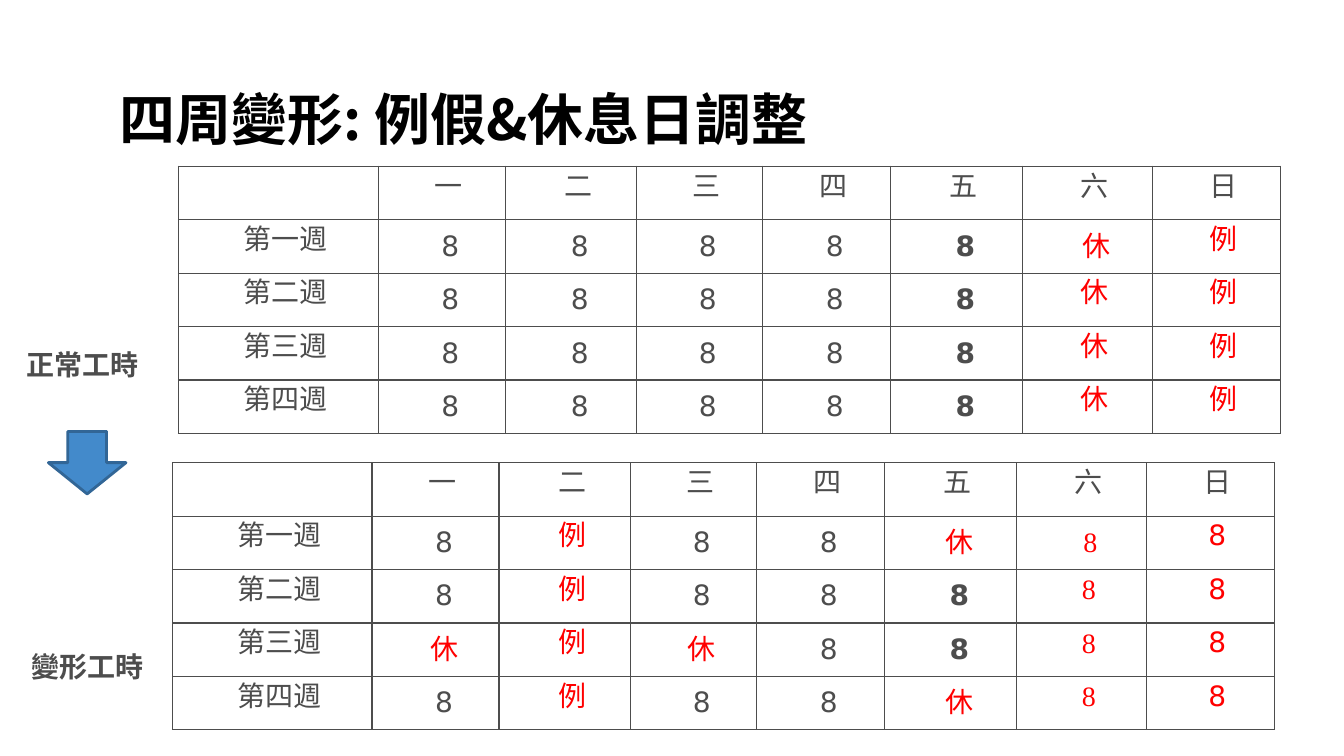
"""Build a slide comparing normal and four-week flexible working schedules."""
from lxml import etree
from pptx import Presentation
from pptx.dml.color import RGBColor
from pptx.enum import shapes, text
from pptx.oxml import ns
from pptx.util import Inches, Pt

TITLE = "四周變形: 例假&休息日調整"
DAYS = "一二三四五六日"
WEEKS = ["第一週", "第二週", "第三週", "第四週"]
NORMAL = ["88888休例"] * 4
FLEX = ["8例88休88", "8例88888", "休例休8888", "8例88休88"]
TABLES = [(1.77, 1.65, NORMAL), (1.71, 4.59, FLEX)]
LABELS = [("正常工時", 0.16, 3.4), ("變形工時", 0.21, 6.39)]
WIDTHS = [1.98, 1.26, 1.3, 1.25, 1.27, 1.31, 1.29, 1.27]
ROW = 0.53
GRAY, RED, WHITE = "4D4D4D", "FF0000", "FFFFFF"
SANS, CJK, SERIF = "DejaVu Sans", "Noto Sans CJK SC", "Times New Roman"
FRI, SAT, SUN = 5, 6, 7


def color(code):
    return RGBColor.from_string(code)


def write(frame, words, size=20, font=SANS, ink=GRAY, bold=False,
          align=text.PP_ALIGN.LEFT, line=None, left=0, first=0):
    para = frame.paragraphs[0]
    para.alignment = align
    if line:
        para.line_spacing = Pt(line)
    props = para._p.get_or_add_pPr()
    props.set("marL", str(Inches(left)))
    props.set("indent", str(Inches(first)))
    run = para.add_run()
    run.text = words
    run.font.size, run.font.bold, run.font.name = Pt(size), bold, font
    run.font.color.rgb = color(ink)
    east = etree.SubElement(run._r.get_or_add_rPr(), ns.qn("a:ea"))
    east.set("typeface", font)


def border(cell):
    props = cell._tc.get_or_add_tcPr()
    for side in "LRTB":
        line = etree.SubElement(props, ns.qn(f"a:ln{side}"), w=str(Pt(1)))
        fill = etree.SubElement(line, ns.qn("a:solidFill"))
        etree.SubElement(fill, ns.qn("a:srgbClr"), val=GRAY)


def fill_cell(cell, words, row, col, flex):
    border(cell)
    if row and col == FRI:
        cell.fill.solid()
        cell.fill.fore_color.rgb = color(WHITE)
    else:
        cell.fill.background()
    if not words:
        return
    cell.margin_left = cell.margin_right = 0
    cell.margin_top = cell.margin_bottom = 0
    cell.vertical_anchor = text.MSO_ANCHOR.MIDDLE
    work = words == "8"
    tight = (row == 0 or col in (0, SUN) or words == "例"
             or (col == SAT and row > 1))
    red = row and (words in "休例" or (flex and col >= SAT))
    write(cell.text_frame, words,
          font=SERIF if work and col == SAT else SANS,
          ink=RED if red else GRAY, bold=work and col == FRI,
          align=text.PP_ALIGN.CENTER, line=13.7 if tight else None,
          left=(0.14 if tight else 0.17) + (0.01 if col in (0, 2, 5, 6) else 0))


def add_grid(slide, left, top, plan):
    rows = [["", *DAYS]] + [[week, *days] for week, days in zip(WEEKS, plan)]
    table = slide.shapes.add_table(
        len(rows), len(WIDTHS), Inches(left), Inches(top),
        Inches(sum(WIDTHS)), Inches(ROW * len(rows))).table
    table.first_row = table.horz_banding = False
    for col, width in zip(table.columns, WIDTHS):
        col.width = Inches(width)
    for r, row in enumerate(rows):
        table.rows[r].height = Inches(ROW)
        for c, words in enumerate(row):
            fill_cell(table.cell(r, c), words, r, c, plan is FLEX)


def add_title(slide):
    title = slide.shapes.title
    title.left, title.top = Inches(1.13), Inches(0.77)
    title.width, title.height = Inches(10.63), Inches(0.81)
    frame = title.text_frame
    frame.margin_left = frame.margin_top = frame.margin_bottom = Inches(0.06)
    frame.vertical_anchor = text.MSO_ANCHOR.MIDDLE
    write(frame, TITLE, size=40, font=CJK, ink="000000", bold=True,
          left=0.04, first=-0.04)


def add_label(slide, words, left, top):
    box = slide.shapes.add_textbox(
        Inches(left), Inches(top), Inches(1.31), Inches(0.44))
    box.text_frame.word_wrap = True
    box.text_frame.auto_size = text.MSO_AUTO_SIZE.SHAPE_TO_FIT_TEXT
    write(box.text_frame, words, bold=True)


def add_arrow(slide):
    arrow = slide.shapes.add_shape(
        shapes.MSO_SHAPE.DOWN_ARROW,
        Inches(0.48), Inches(4.28), Inches(0.77), Inches(0.62))
    arrow.shadow.inherit = False
    arrow.fill.solid()
    arrow.fill.fore_color.rgb = color("438ACB")
    arrow.line.color.rgb = color("326696")
    arrow.line.width = Pt(2)


def main():
    deck = Presentation()
    deck.slide_width, deck.slide_height = Inches(13.33), Inches(7.5)
    slide = deck.slides.add_slide(deck.slide_layouts[5])
    add_title(slide)
    for left, top, plan in TABLES:
        add_grid(slide, left, top, plan)
    for words, left, top in LABELS:
        add_label(slide, words, left, top)
    add_arrow(slide)
    deck.save("out.pptx")


if __name__ == "__main__":
    main()
